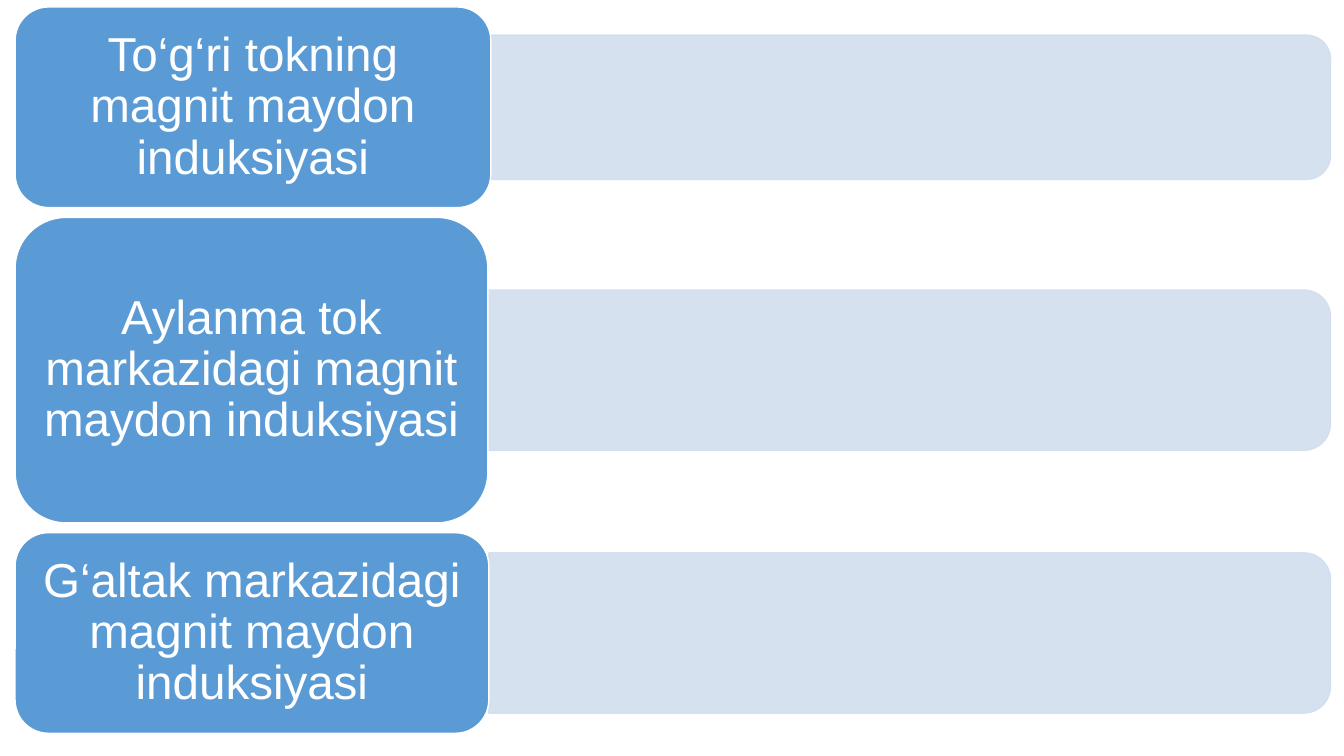
import pptx
import pptx.util
import pptx.dml.color
import pptx.enum.shapes
import pptx.enum.text
import lxml.etree

Pt = pptx.util.Pt
SHAPES = pptx.enum.shapes.MSO_SHAPE

# Content: label, box width, box height, band height
ROWS = [
    ("To‘g‘ri tokning magnit maydon induksiyasi", 339.8, 143.3, 103),
    ("Aylanma tok markazidagi magnit maydon induksiyasi", 337.7, 218.2, 114.5),
    ("G‘altak markazidagi magnit maydon induksiyasi", 338.4, 143.3, 114.5),
]
LEFT, TOP, GAP = 10.8, 5, 7
BAND_RIGHT = 950.4
BLUE, PALE, WHITE = "5B9BD5", "D2DEEF", "FFFFFF"


def color(hex_text):
    return pptx.dml.color.RGBColor.from_string(hex_text)


def add_block(slide, kind, left, top, width, height, fill, line):
    shape = slide.shapes.add_shape(kind, Pt(left), Pt(top), Pt(width), Pt(height))
    shape.shadow.inherit = False
    shape.fill.solid()
    shape.fill.fore_color.rgb = color(fill)
    shape.line.color.rgb = color(line)
    shape.line.width = Pt(1)
    return shape


def add_band(slide, left, middle, height):
    # The shape is drawn upright about its centre, then turned a quarter
    length = BAND_RIGHT - left
    center = left + length / 2
    band = add_block(slide, SHAPES.ROUND_2_SAME_RECTANGLE, center - height / 2,
                     middle - length / 2, height, length, PALE, PALE)
    band.rotation = 90
    # Fill and line are 90 % opaque
    for element in band._element.spPr.iter(pptx.oxml.ns.qn("a:srgbClr")):
        lxml.etree.SubElement(element, pptx.oxml.ns.qn("a:alpha"), val="90000")


def add_label_box(slide, label, top, width, height):
    box = add_block(slide, SHAPES.ROUNDED_RECTANGLE, LEFT, top, width, height, BLUE, WHITE)
    frame = box.text_frame
    frame.word_wrap = True
    frame.vertical_anchor = pptx.enum.text.MSO_ANCHOR.MIDDLE
    frame.margin_left = frame.margin_right = Pt(10)
    frame.margin_top = frame.margin_bottom = Pt(5)
    paragraph = frame.paragraphs[0]
    paragraph.text = label
    paragraph.alignment = pptx.enum.text.PP_ALIGN.CENTER
    paragraph.line_spacing = 0.9
    paragraph.font.name = "Arial"
    paragraph.font.size = Pt(34)
    paragraph.font.color.rgb = color(WHITE)


def main():
    presentation = pptx.Presentation()
    presentation.slide_width = Pt(960)
    presentation.slide_height = Pt(540)
    slide = presentation.slides.add_slide(presentation.slide_layouts[6])

    # Rows, each band centred on its box
    top = TOP
    for label, width, height, band_height in ROWS:
        add_band(slide, LEFT + width, top + height / 2, band_height)
        add_label_box(slide, label, top, width, height)
        top += height + GAP

    presentation.save("out.pptx")


if __name__ == "__main__":
    main()
